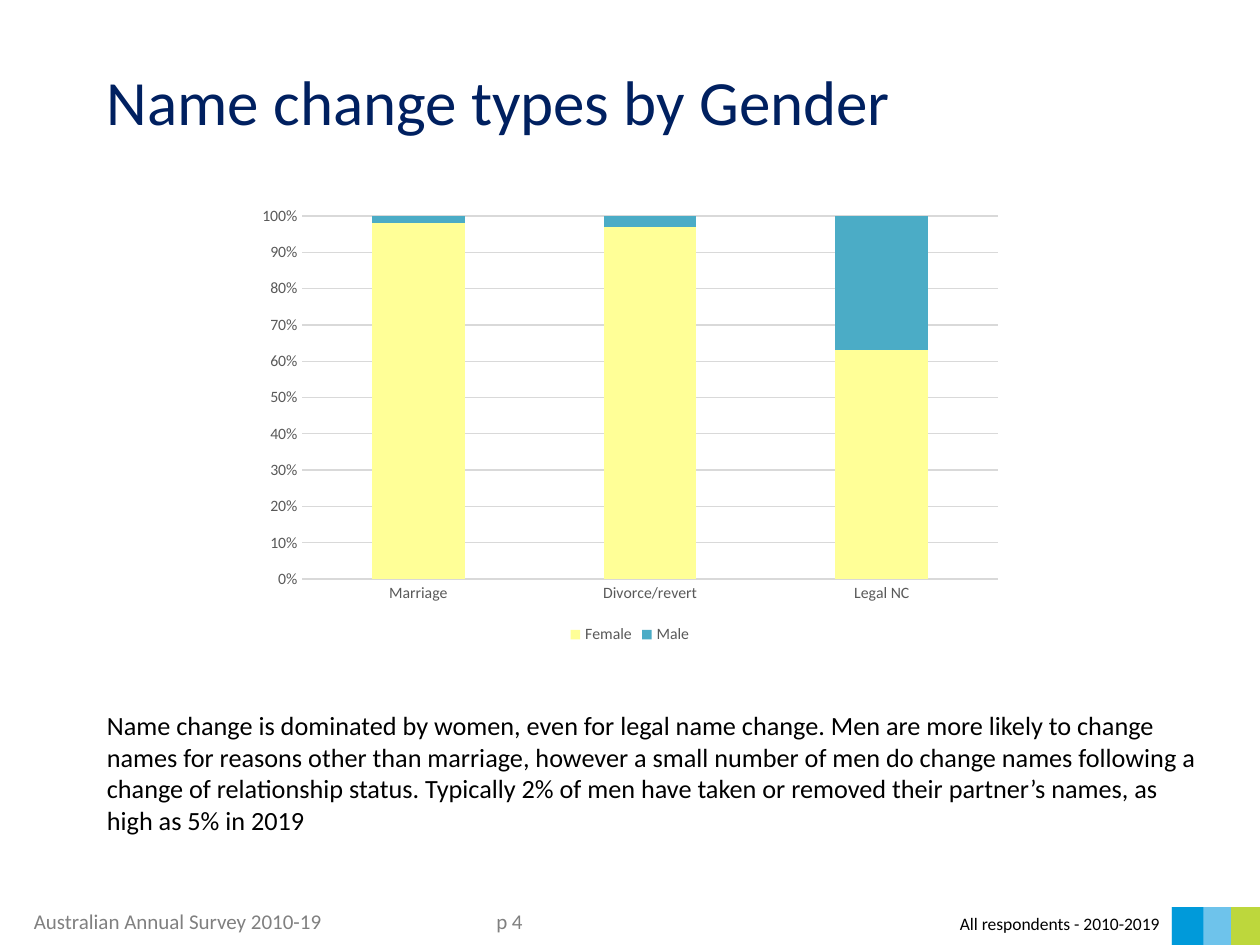
from lxml.etree import SubElement
from pptx import Presentation
from pptx.chart.data import CategoryChartData
from pptx.dml.color import RGBColor
from pptx.enum.chart import XL_CHART_TYPE, XL_LEGEND_POSITION, XL_TICK_MARK
from pptx.enum.shapes import MSO_SHAPE
from pptx.enum.text import MSO_ANCHOR, PP_ALIGN
from pptx.oxml.ns import qn
from pptx.util import Inches, Pt

NAVY = RGBColor(0x00, 0x20, 0x60)
BLACK = RGBColor(0x00, 0x00, 0x00)
GREY = RGBColor(0x80, 0x80, 0x80)
LABEL_GREY = RGBColor(0x59, 0x59, 0x59)
GRID_GREY = RGBColor(0xD9, 0xD9, 0xD9)
YELLOW = RGBColor(0xFF, 0xFF, 0x97)
TEAL = RGBColor(0x4B, 0xAC, 0xC6)
BLUE = RGBColor(0x00, 0x9A, 0xDA)
SKY = RGBColor(0x6E, 0xC3, 0xEB)
LIME = RGBColor(0xBD, 0xD7, 0x3C)
FONT = "Calibri"

CATEGORIES = ["Marriage", "Divorce/revert", "Legal NC"]
GENDERS = [("Female", [0.98, 0.97, 0.63], YELLOW),
           ("Male", [0.02, 0.03, 0.37], TEAL)]
COMMENT = ("Name change is dominated by women, even for legal name change. "
           "Men are more likely to change names for reasons other than marriage, "
           "however a small number of men do change names following a change of "
           "relationship status. Typically 2% of men have taken or removed their "
           "partner’s names, as high as 5% in 2019")


def set_font(font, size, color):
    font.name, font.size = FONT, Pt(size)
    font.color.rgb = color


def add_text(slide, box, text, size, color, align=PP_ALIGN.LEFT,
             anchor=MSO_ANCHOR.TOP, tab=None):
    """Place one paragraph in box (inches), with an optional tab stop."""
    frame = slide.shapes.add_textbox(*map(Inches, box)).text_frame
    frame.word_wrap = True
    frame.vertical_anchor = anchor
    frame.text = text
    paragraph = frame.paragraphs[0]
    paragraph.alignment = align
    if tab:
        stops = SubElement(paragraph._p.get_or_add_pPr(), qn("a:tabLst"))
        SubElement(stops, qn("a:tab"), pos=str(Inches(tab)), algn="l")
    for run in paragraph.runs:
        set_font(run.font, size, color)


def add_gender_chart(slide, box):
    data = CategoryChartData(number_format="0%")
    data.categories = CATEGORIES
    for gender, shares, _ in GENDERS:
        data.add_series(gender, shares)
    chart = slide.shapes.add_chart(
        XL_CHART_TYPE.COLUMN_STACKED, *map(Inches, box), data).chart
    set_font(chart.font, 10, BLACK)
    chart.has_title = False

    plot = chart.plots[0]
    plot.gap_width, plot.overlap = 150, 100
    plot.vary_by_categories = False
    for series, (_, _, color) in zip(plot.series, GENDERS):
        series.format.fill.solid()
        series.format.fill.fore_color.rgb = color

    share_axis = chart.value_axis
    share_axis.minimum_scale, share_axis.maximum_scale = 0, 1
    share_axis.major_unit = 0.1
    share_axis.format.line.fill.background()
    share_axis.tick_labels.number_format = "0%"
    share_axis.tick_labels.number_format_is_linked = False
    for axis in (chart.category_axis, share_axis):
        axis.major_tick_mark = axis.minor_tick_mark = XL_TICK_MARK.NONE
        set_font(axis.tick_labels.font, 9, LABEL_GREY)
    for line in (share_axis.major_gridlines.format.line,
                 chart.category_axis.format.line):
        line.color.rgb = GRID_GREY
        line.width = Pt(0.75)

    chart.has_legend = True
    chart.legend.position = XL_LEGEND_POSITION.BOTTOM
    chart.legend.include_in_layout = False
    set_font(chart.legend.font, 9, LABEL_GREY)


def add_color_strip(slide, box):
    """Full-width sky band with a square block at each end."""
    left, top, width, height = box
    block = 0.25
    for x, w, color in ((left, width, SKY), (left + width - block, block, LIME),
                        (left, block, BLUE)):
        band = slide.shapes.add_shape(
            MSO_SHAPE.RECTANGLE, *map(Inches, (x, top, w, height)))
        band.shadow.inherit = False
        band.fill.solid()
        band.fill.fore_color.rgb = color
        band.line.fill.background()


def add_footer(slide, box):
    left, top, width, height = box
    add_text(slide, (left, top, 8.08, height),
             "Australian Annual Survey 2010-19\tp 4", 12, GREY, tab=3.67)
    strip_width = 0.72
    strip_left = left + width - strip_width
    add_color_strip(slide, (strip_left, top + 0.04, strip_width, height))
    add_text(slide, (strip_left - 2.25, top + 0.04, 2.25, 0.27),
             "All respondents - 2010-2019", 10, BLACK, PP_ALIGN.RIGHT)


def main():
    deck = Presentation()
    deck.slide_width, deck.slide_height = Inches(10), Inches(7.5)
    slide = deck.slides.add_slide(deck.slide_layouts[6])
    add_text(slide, (0.75, 0.17, 9, 1.25), "Name change types by Gender",
             36, NAVY, anchor=MSO_ANCHOR.MIDDLE)
    add_gender_chart(slide, (1.96, 1.57, 6.08, 3.58))
    add_text(slide, (0.75, 5.58, 8.92, 1.11), COMMENT, 15, BLACK)
    add_footer(slide, (0.17, 7.16, 9.85, 0.3))
    deck.save("out.pptx")


if __name__ == "__main__":
    main()
